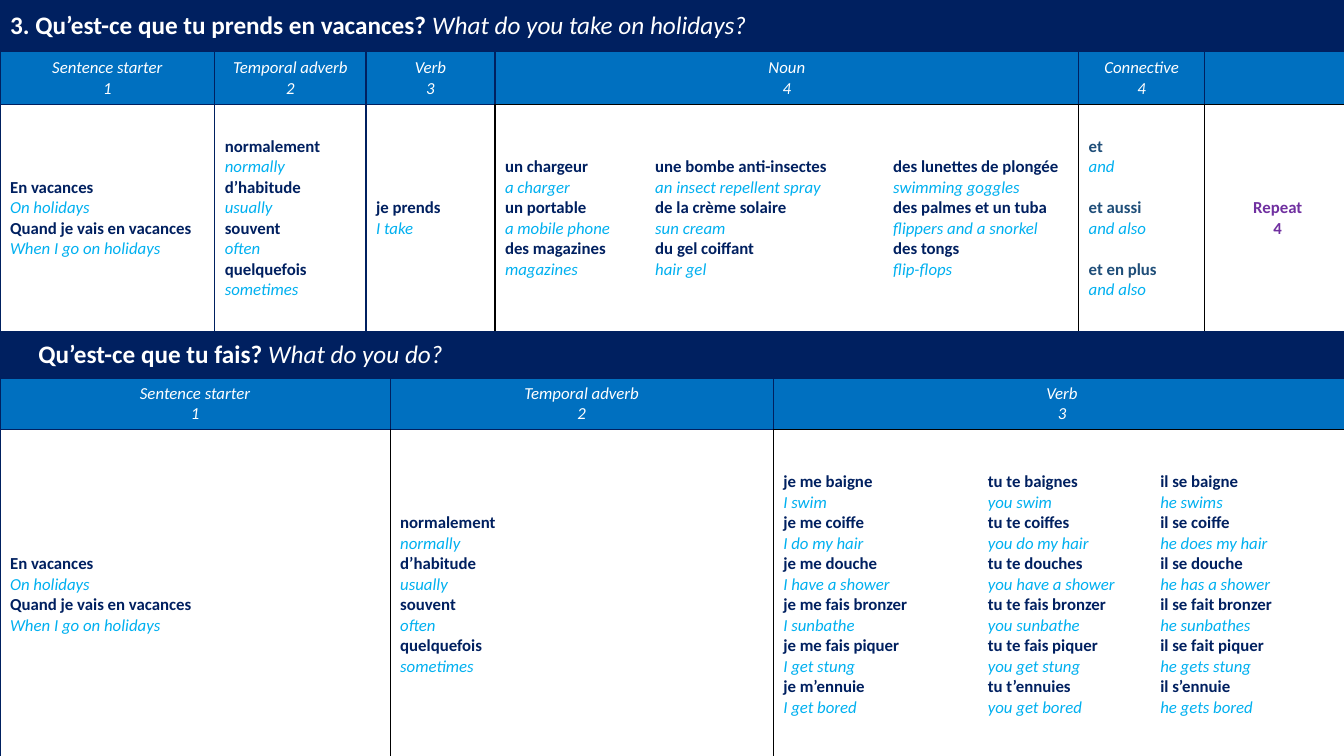
import pptx
import pptx.dml.color
import pptx.enum.text
import pptx.oxml
import pptx.oxml.ns
import pptx.util

NAVY, BLUE, SKY, WHITE = "002060", "0070C0", "00B0F0", "FFFFFF"
STEEL, PURPLE, BLACK = "1F4E79", "7030A0", "000000"
SLIDE_WIDTH, SLIDE_HEIGHT = 13.33, 7.5
COLUMNS = [2.13, 1.5, 0.17, 1.04, 1.49, 1.27, 1.09, 0.94, 1, 0.71, 0.54, 1.45]
ROWS = [0.51, 0.53, 2.25, 0.46, 0.51, 3.28]
EDGE_COLOURS = {"n": NAVY, "k": BLACK}

STARTERS = [
    ("En vacances", "On holidays"),
    ("Quand je vais en vacances", "When I go on holidays"),
]
ADVERBS = [
    ("normalement", "normally"),
    ("d’habitude", "usually"),
    ("souvent", "often"),
    ("quelquefois", "sometimes"),
]
TAKE = [("je prends", "I take")]
POCKET_ITEMS = [
    ("un chargeur", "a charger"),
    ("un portable", "a mobile phone"),
    ("des magazines", "magazines"),
]
TOILETRIES = [
    ("une bombe anti-insectes", "an insect repellent spray"),
    ("de la crème solaire", "sun cream"),
    ("du gel coiffant", "hair gel"),
]
BEACH_ITEMS = [
    ("des lunettes de plongée", "swimming goggles"),
    ("des palmes et un tuba", "flippers and a snorkel"),
    ("des tongs", "flip-flops"),
]
CONNECTIVES = [("et", "and"), ("et aussi", "and also"), ("et en plus", "and also")]
I_FORMS = [
    ("je me baigne", "I swim"),
    ("je me coiffe", "I do my hair"),
    ("je me douche", "I have a shower"),
    ("je me fais bronzer", "I sunbathe"),
    ("je me fais piquer", "I get stung"),
    ("je m’ennuie", "I get bored"),
]
YOU_FORMS = [
    ("tu te baignes", "you swim"),
    ("tu te coiffes", "you do my hair"),
    ("tu te douches", "you have a shower"),
    ("tu te fais bronzer", "you sunbathe"),
    ("tu te fais piquer", "you get stung"),
    ("tu t’ennuies", "you get bored"),
]
HE_FORMS = [
    ("il se baigne", "he swims"),
    ("il se coiffe", "he does my hair"),
    ("il se douche", "he has a shower"),
    ("il se fait bronzer", "he sunbathes"),
    ("il se fait piquer", "he gets stung"),
    ("il s’ennuie", "he gets bored"),
]


def colour(hex_string):
    return pptx.dml.color.RGBColor.from_string(hex_string)


def write_text(paragraph, text, size=12, ink=WHITE, bold=False, italic=False,
               centred=False, before=0, font="Calibri"):
    run = paragraph.add_run()
    run.text = text
    run.font.name = font
    run.font.size = pptx.util.Pt(size)
    run.font.bold = bold
    run.font.italic = italic
    run.font.color.rgb = colour(ink)
    paragraph.space_before = pptx.util.Pt(before)
    if centred:
        paragraph.alignment = pptx.enum.text.PP_ALIGN.CENTER


class SentenceBuilder:
    def __init__(self, slide):
        frame = slide.shapes.add_table(
            len(ROWS), len(COLUMNS), 0, 0,
            pptx.util.Inches(sum(COLUMNS)), pptx.util.Inches(sum(ROWS)))
        self.grid = frame.table
        self.grid.first_row = False
        self.grid.horz_banding = False
        for column, width in zip(self.grid.columns, COLUMNS):
            column.width = pptx.util.Inches(width)
        for row, height in zip(self.grid.rows, ROWS):
            row.height = pptx.util.Inches(height)

    def border(self, cell, edges):
        properties = cell._tc.get_or_add_tcPr()
        for position, (side, key) in enumerate(zip("LRTB", edges)):
            paint = "<a:noFill/>"
            if key in EDGE_COLOURS:
                paint = f'<a:solidFill><a:srgbClr val="{EDGE_COLOURS[key]}"/></a:solidFill>'
            line = pptx.oxml.parse_xml(
                f'<a:ln{side} {pptx.oxml.ns.nsdecls("a")} w="12700">{paint}</a:ln{side}>')
            properties.insert(position, line)

    def cell(self, row, column, span, edges, fill=WHITE):
        covered = [self.grid.cell(row, column + step) for step in range(span)]
        for part in covered:
            part.fill.solid()
            part.fill.fore_color.rgb = colour(fill)
            self.border(part, edges)
        if span > 1:
            covered[0].merge(covered[-1])
        covered[0].vertical_anchor = pptx.enum.text.MSO_ANCHOR.MIDDLE
        return covered[0]

    def lines(self, cell, formatted_lines):
        for number, (text, style) in enumerate(formatted_lines):
            frame = cell.text_frame
            paragraph = frame.add_paragraph() if number else frame.paragraphs[0]
            write_text(paragraph, text, **style)

    def title(self, row, question, translation, edges="nnnn", indent=0.1):
        cell = self.cell(row, 0, len(COLUMNS), edges, NAVY)
        cell.margin_left = pptx.util.Inches(indent)
        paragraph = cell.text_frame.paragraphs[0]
        write_text(paragraph, question + " ", size=18, bold=True)
        write_text(paragraph, translation, size=18, italic=True)

    def heading(self, row, column, span, label, number, edges="nnnn"):
        style = dict(italic=True, centred=True)
        self.lines(self.cell(row, column, span, edges, BLUE),
                   [(label, style), (number, style)])

    def phrases(self, row, column, span, pairs, edges, ink=NAVY, gap=0):
        formatted = []
        for number, (french, english) in enumerate(pairs):
            before = gap if number else 0
            formatted.append((french, dict(ink=ink, bold=True, before=before)))
            formatted.append((english, dict(ink=SKY, italic=True)))
        self.lines(self.cell(row, column, span, edges), formatted)

    def repeat(self, row, column, label, number):
        style = dict(ink=PURPLE, bold=True, centred=True)
        self.lines(self.cell(row, column, 1, "kkkk"), [(label, style), (number, style)])


def main():
    deck = pptx.Presentation()
    deck.slide_width = pptx.util.Inches(SLIDE_WIDTH)
    deck.slide_height = pptx.util.Inches(SLIDE_HEIGHT)
    builder = SentenceBuilder(deck.slides.add_slide(deck.slide_layouts[6]))

    builder.title(0, "3. Qu’est-ce que tu prends en vacances?",
                  "What do you take on holidays?")
    builder.heading(1, 0, 1, "Sentence starter", "1")
    builder.heading(1, 1, 1, "Temporal adverb", "2")
    builder.heading(1, 2, 2, "Verb", "3")
    builder.heading(1, 4, 5, "Noun", "4", "nnnk")
    builder.heading(1, 9, 2, "Connective", "4", "nnnk")
    builder.cell(1, 11, 1, "nnnk", BLUE)
    builder.phrases(2, 0, 1, STARTERS, "nnnn")
    builder.phrases(2, 1, 1, ADVERBS, "nnnn")
    builder.phrases(2, 2, 2, TAKE, "nknn")
    builder.phrases(2, 4, 1, POCKET_ITEMS, "k-kk")
    builder.phrases(2, 5, 2, TOILETRIES, "--kk")
    builder.phrases(2, 7, 2, BEACH_ITEMS, "-kkk")
    builder.phrases(2, 9, 2, CONNECTIVES, "kkkk", ink=STEEL, gap=14.65)
    builder.repeat(2, 11, "Repeat", "4")

    builder.title(3, "Qu’est-ce que tu fais?", "What do you do?", "nknn", indent=0.38)
    builder.heading(4, 0, 3, "Sentence starter", "1")
    builder.heading(4, 3, 3, "Temporal adverb", "2")
    builder.heading(4, 6, 6, "Verb", "3", "nknk")
    builder.phrases(5, 0, 3, STARTERS, "nknn")
    builder.phrases(5, 3, 3, ADVERBS, "kknn")
    builder.phrases(5, 6, 2, I_FORMS, "k-kk")
    builder.phrases(5, 8, 2, YOU_FORMS, "--kk")
    builder.phrases(5, 10, 2, HE_FORMS, "-kkk")

    deck.save("out.pptx")


if __name__ == "__main__":
    main()
